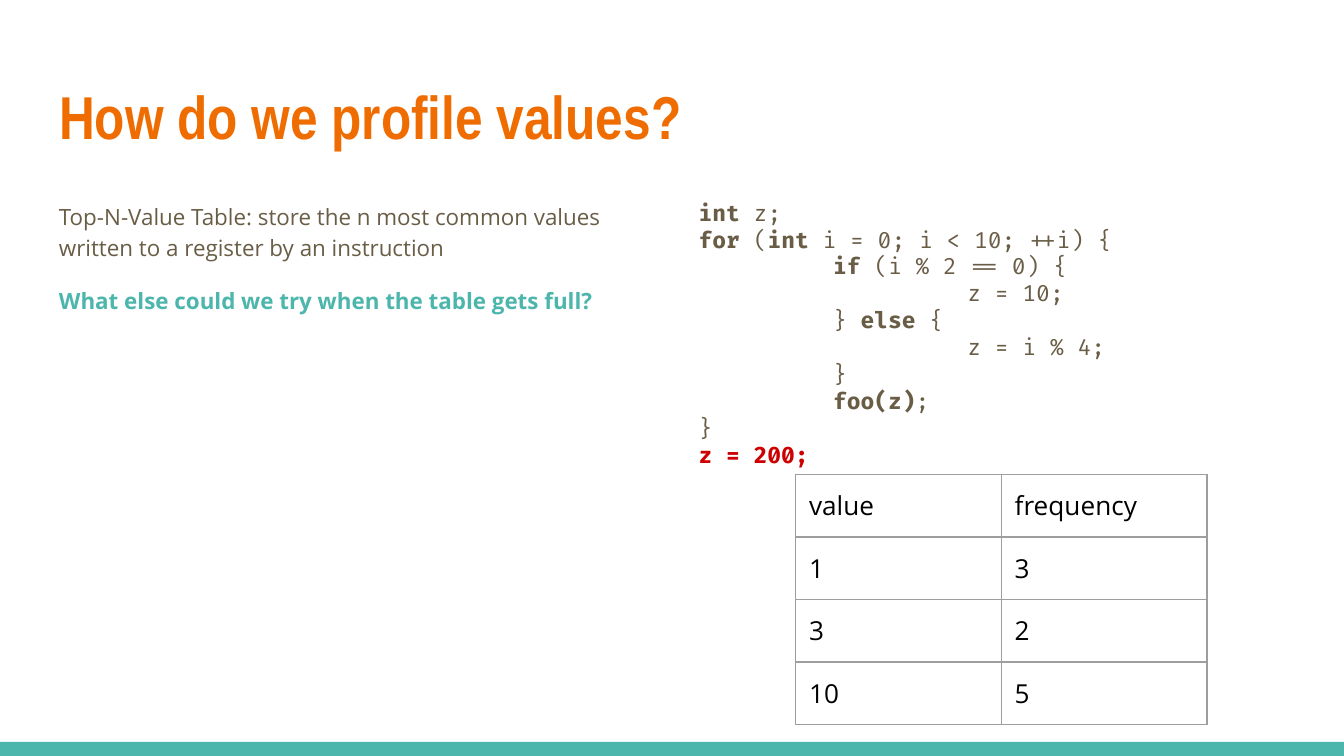
import pptx
import pptx.util
import pptx.dml.color
import pptx.enum.shapes
import pptx.enum.text
import pptx.oxml
from lxml import etree

Inches, Pt = pptx.util.Inches, pptx.util.Pt
RGBColor = pptx.dml.color.RGBColor
qn = pptx.oxml.ns.qn

ORANGE = RGBColor(0xEF, 0x6C, 0x00)
BROWN = RGBColor(0x69, 0x5D, 0x46)
TEAL = RGBColor(0x4D, 0xB6, 0xAC)
RED = RGBColor(0xCC, 0x00, 0x00)
BLACK = RGBColor(0x00, 0x00, 0x00)
GRAY = RGBColor(0x9E, 0x9E, 0x9E)

# Content: ** switches bold on and off
TITLE = "**How do we profile values?**"
EXPLANATION = ("Top-N-Value Table: store the n most common values "
               "written to a register by an instruction")
QUESTION = "**What else could we try when the table gets full?**"
CODE = [
    "**int** z;",
    "**for** (**int** i = 0; i < 10; ++i) {",
    "\t**if** (i % 2 == 0) {",
    "\t\tz = 10;",
    "\t} **else** {",
    "\t\tz = i % 4;",
    "\t}",
    "\t**foo(z)**;",
    "}",
]
LAST_LINE = "**z = 200;**"
VALUE_TABLE = [("value", "frequency"), ("1", "3"), ("3", "2"), ("10", "5")]

# Layout in inches, on a 16:9 slide
SLIDE_W = 10
SLIDE_H = SLIDE_W * 9 / 16
BAR_TOP = 5.52
COL_W, ROW_H = 1.53, 0.46
TAB_STOPS = (1, 2)
INSET = Inches(0.1)


def write(frame, text, *, font, size, color, line_spacing=1.0, before=0, tabs=()):
    """Add one paragraph, filling the first one if it is still empty."""
    paragraph = frame.paragraphs[0]
    if paragraph.runs:
        paragraph = frame.add_paragraph()
    paragraph.alignment = pptx.enum.text.PP_ALIGN.LEFT
    paragraph.line_spacing = line_spacing
    paragraph.space_before = Pt(before)
    if tabs:
        stops = etree.SubElement(paragraph._p.get_or_add_pPr(), qn("a:tabLst"))
        for tab in tabs:
            etree.SubElement(stops, qn("a:tab"), pos=str(Inches(tab)), algn="l")
    for index, part in enumerate(text.split("**")):
        if part:
            run = paragraph.add_run()
            run.text = part
            run.font.name = font
            run.font.size = Pt(size)
            run.font.bold = index % 2 == 1
            run.font.color.rgb = color


def prepare(frame):
    frame.word_wrap = True
    frame.auto_size = pptx.enum.text.MSO_AUTO_SIZE.NONE
    frame.vertical_anchor = pptx.enum.text.MSO_ANCHOR.TOP
    frame.margin_left = frame.margin_right = INSET
    frame.margin_top = frame.margin_bottom = INSET
    return frame


def add_text_area(slide, left, top, width, height):
    box = slide.shapes.add_textbox(
        Inches(left), Inches(top), Inches(width), Inches(height))
    return prepare(box.text_frame)


def outline_cell(cell):
    properties = cell._tc.get_or_add_tcPr()
    for position, side in enumerate(("lnL", "lnR", "lnT", "lnB")):
        border = etree.Element(qn(f"a:{side}"), w=str(Pt(0.75)))
        fill = etree.SubElement(border, qn("a:solidFill"))
        etree.SubElement(fill, qn("a:srgbClr"), val=str(GRAY))
        properties.insert(position, border)


def main():
    deck = pptx.Presentation()
    deck.slide_width, deck.slide_height = Inches(SLIDE_W), Inches(SLIDE_H)
    slide = deck.slides.add_slide(deck.slide_layouts[5])

    # Bottom bar
    bar = slide.shapes.add_shape(
        pptx.enum.shapes.MSO_SHAPE.RECTANGLE, 0, Inches(BAR_TOP),
        Inches(SLIDE_W), Inches(SLIDE_H - BAR_TOP))
    bar.shadow.inherit = False
    bar.fill.solid()
    bar.fill.fore_color.rgb = TEAL
    bar.line.fill.background()

    # Title
    title = slide.shapes.title
    title.left, title.top = Inches(0.34), Inches(0.49)
    title.width, title.height = Inches(9.32), Inches(0.77)
    write(prepare(title.text_frame), TITLE,
          font="Arial Narrow", size=32.4, color=ORANGE)

    # Code on the right
    code = add_text_area(slide, 5.1, 1.38, 4.7, 3.8)
    for line in CODE:
        write(code, line, font="Fira Code", size=12, color=BROWN, tabs=TAB_STOPS)
    write(code, LAST_LINE, font="Fira Code", size=12, color=RED)

    # Table of values below the code
    rows, cols = len(VALUE_TABLE), len(VALUE_TABLE[0])
    table = slide.shapes.add_table(
        rows, cols, Inches(5.92), Inches(3.53),
        Inches(cols * COL_W), Inches(rows * ROW_H)).table
    table.first_row = table.horz_banding = False
    for r, values in enumerate(VALUE_TABLE):
        for c, value in enumerate(values):
            cell = table.cell(r, c)
            cell.fill.background()
            cell.margin_left = cell.margin_right = INSET
            cell.margin_top = cell.margin_bottom = INSET
            write(cell.text_frame, value, font="Open Sans", size=14, color=BLACK)
            outline_cell(cell)

    # Explanation on the left
    explanation = add_text_area(slide, 0.34, 1.38, 4.66, 3.61)
    write(explanation, EXPLANATION, font="Open Sans", size=12, color=BROWN,
          line_spacing=1.15)
    write(explanation, QUESTION, font="Open Sans", size=12, color=TEAL,
          line_spacing=1.15, before=12)

    deck.save("out.pptx")


if __name__ == "__main__":
    main()
